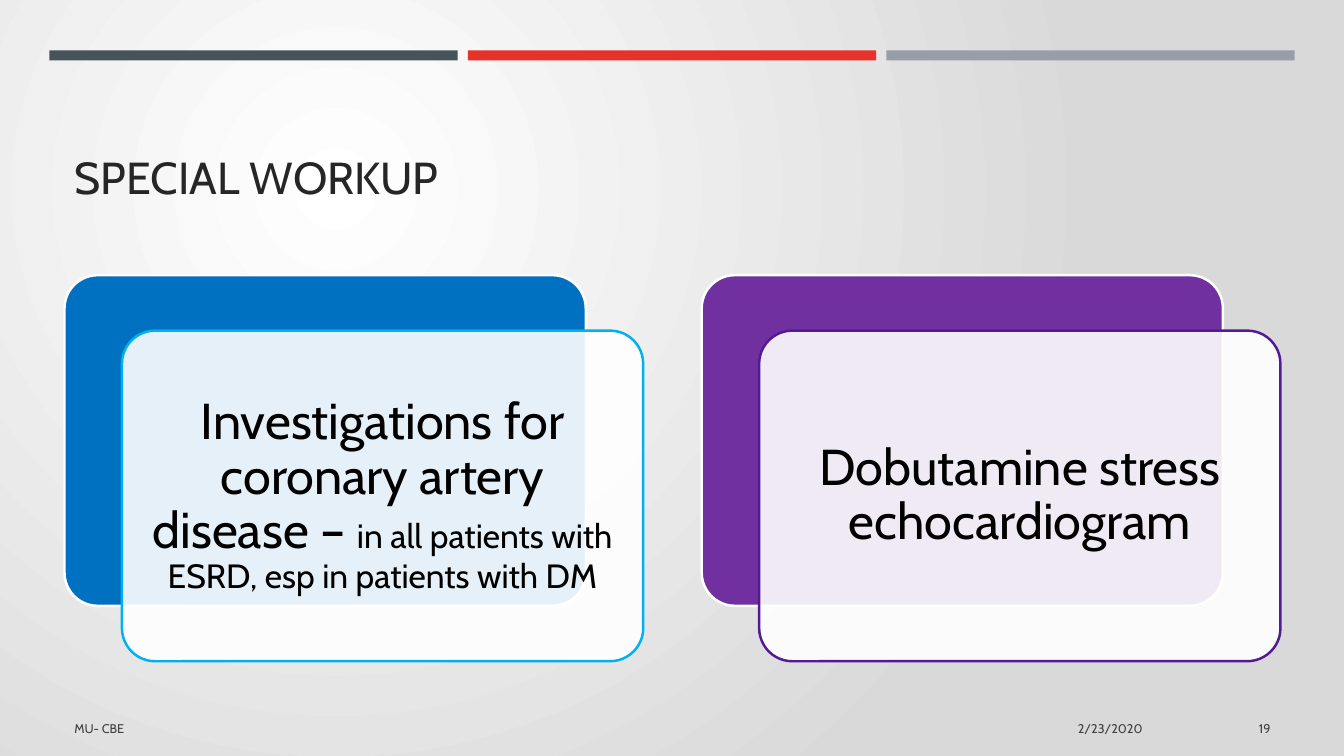
"""Builds the special workup slide with two layered cards."""
from lxml import etree
from pptx import Presentation
from pptx.dml.color import RGBColor
from pptx.enum.shapes import MSO_SHAPE
from pptx.enum.text import MSO_ANCHOR, PP_ALIGN
from pptx.oxml.ns import qn
from pptx.util import Inches, Pt

RECT, ROUND = MSO_SHAPE.RECTANGLE, MSO_SHAPE.ROUNDED_RECTANGLE
MIDDLE, BOTTOM = MSO_ANCHOR.MIDDLE, MSO_ANCHOR.BOTTOM
LEFT, CENTER, RIGHT = PP_ALIGN.LEFT, PP_ALIGN.CENTER, PP_ALIGN.RIGHT
FONT = "Cabin"

BACK = ["FFFFFF", "D9D9D9"]
BARS = ["465359", "E73129", "969FA7"]
TITLE = "SPECIAL WORKUP"
CARDS = [
    ("0070C0", "00B0F0", [
        ("Investigations for coronary artery disease – ", 36),
        ("in all patients with ESRD, esp in patients with DM", 24)]),
    ("7030A0", "521B93", [("Dobutamine stress echocardiogram", 36)]),
]
FOOT = [
    ("MU- CBE", 0.64, 7.56, LEFT),
    ("2/23/2020", 8.32, 3.11, RIGHT),
    ("19", 11.55, 1.15, RIGHT),
]

BAR_X, BAR_Y, BAR_W, BAR_H, BAR_STEP = 0.49, 0.5, 4.05, 0.1, 4.15
CARD_X, CARD_Y, CARD_W, CARD_H, CARD_STEP = 0.64, 2.73, 5.17, 3.28, 6.32
SHIFT_X, SHIFT_Y, INSET = 0.57, 0.55, 0.1
CARD_FORM = {f"margin_{side}": Inches(0.15)
             for side in ("left", "top", "right", "bottom")}


def color(code):
    return RGBColor.from_string(code)


def add_box(slide, kind, area, fill, line=None, alpha=None):
    box = slide.shapes.add_shape(kind, *map(Inches, area))
    box.shadow.inherit = False
    box.fill.solid()
    box.fill.fore_color.rgb = color(fill)
    if kind == ROUND:
        box.adjustments[0] = 0.1
    if line:
        box.line.color.rgb = color(line)
        box.line.width = Pt(1.75)
    else:
        box.line.fill.background()
    if alpha:
        tone = box.fill._xPr.find(f".//{qn('a:srgbClr')}")
        etree.SubElement(tone, qn("a:alpha"), val=str(alpha * 1000))


def add_text(slide, area, runs, ink, align, anchor=MIDDLE, space=1.0, form=None):
    frame = slide.shapes.add_textbox(*map(Inches, area)).text_frame
    look = {"word_wrap": True, "vertical_anchor": anchor, **(form or {})}
    for name, value in look.items():
        setattr(frame, name, value)
    para = frame.paragraphs[0]
    para.alignment, para.line_spacing = align, space
    for words, size in runs:
        run = para.add_run()
        run.text = words
        for name, value in {"name": FONT, "size": Pt(size)}.items():
            setattr(run.font, name, value)
        run.font.color.rgb = color(ink)


def paint_back(slide):
    fill = slide.background.fill
    fill.gradient()
    for stop, code in zip(fill.gradient_stops, BACK):
        stop.color.rgb = color(code)
    line = slide.background._cSld.find(f".//{qn('a:lin')}")
    ring = etree.Element(qn("a:path"), path="circle")
    etree.SubElement(ring, qn("a:fillToRect"),
                     l="50000", t="50000", r="100000", b="100000")
    line.getparent().replace(line, ring)


def main():
    deck = Presentation()
    deck.slide_width, deck.slide_height = Inches(13.33), Inches(7.5)
    slide = deck.slides.add_slide(deck.slide_layouts[6])
    paint_back(slide)
    for i, code in enumerate(BARS):
        add_box(slide, RECT, (BAR_X + i * BAR_STEP, BAR_Y, BAR_W, BAR_H), code)
    add_text(slide, (0.64, 0.77, 12.06, 1.3), [(TITLE, 32)], "262626", LEFT, BOTTOM)
    for i, (fill, edge, runs) in enumerate(CARDS):
        x = CARD_X + i * CARD_STEP
        front_x, front_y = x + SHIFT_X, CARD_Y + SHIFT_Y
        add_box(slide, ROUND, (x, CARD_Y, CARD_W, CARD_H), fill, "FFFFFF")
        add_box(slide, ROUND, (front_x, front_y, CARD_W, CARD_H), "FFFFFF", edge, 90)
        inner = (front_x + INSET, front_y + INSET,
                 CARD_W - 2 * INSET, CARD_H - 2 * INSET)
        add_text(slide, inner, runs, "000000", CENTER, space=0.9, form=CARD_FORM)
    for words, x, width, align in FOOT:
        add_text(slide, (x, 7.03, width, 0.4), [(words, 9)], "404040", align)
    deck.save("out.pptx")


if __name__ == "__main__":
    main()
